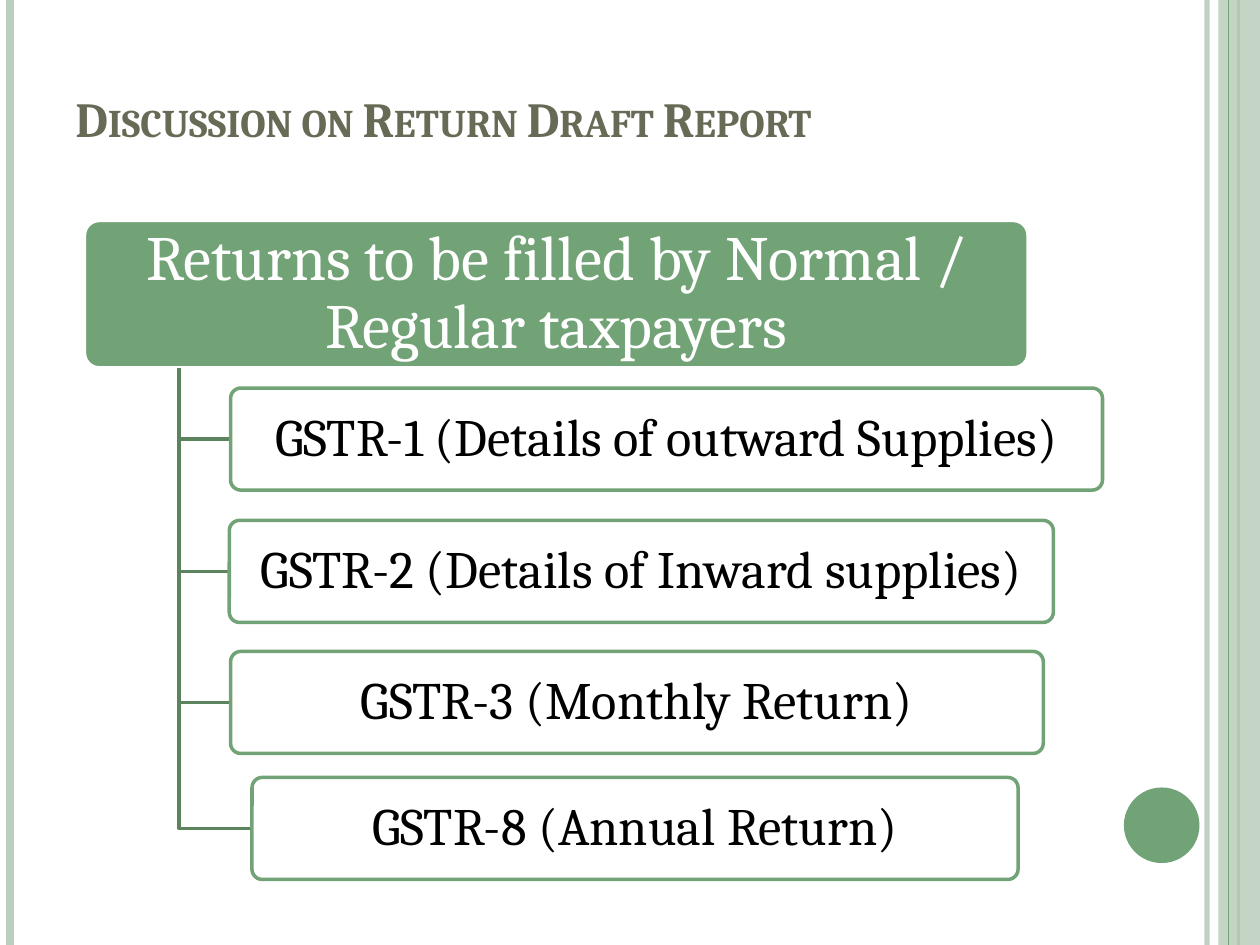
"""Build the slide on draft returns as a title and a hanging list of boxes."""
from dataclasses import dataclass

from lxml.etree import SubElement
from pptx import Presentation
from pptx.dml.color import RGBColor
from pptx.enum.shapes import MSO_CONNECTOR, MSO_SHAPE
from pptx.enum.text import MSO_ANCHOR, PP_ALIGN
from pptx.oxml import parse_xml
from pptx.oxml.ns import nsdecls, qn
from pptx.util import Inches, Pt


@dataclass(frozen=True)
class Theme:
    font: str = "Cambria"
    green: str = "72A376"
    pale: str = "BCCEBD"
    dark: str = "5B835E"
    olive: str = "676A55"
    white: str = "FFFFFF"
    black: str = "000000"
    title: int = 28
    head: int = 36
    item: int = 30
    edge: float = 2


@dataclass
class Deck:
    theme: Theme
    slide: object

    def paint(self, fill, color, alpha=100):
        fill.solid()
        fill.fore_color.rgb = RGBColor.from_string(color)
        if alpha < 100:
            tint = fill._xPr.find(qn("a:solidFill"))[0]
            SubElement(tint, qn("a:alpha")).set("val", str(alpha * 1000))

    def stroke(self, line, color, width, alpha=100):
        self.paint(line.fill, color, alpha)
        line.width = Pt(width)

    def rule(self, x, color, width, alpha=100):
        line = self.slide.shapes.add_connector(
            MSO_CONNECTOR.STRAIGHT, Inches(x), 0, Inches(x), Inches(7.5))
        self.stroke(line.line, color, width, alpha)
        SubElement(line._element.spPr, qn("a:effectLst"))

    def shape(self, kind, area, color, alpha=100, edge=None):
        form = self.slide.shapes.add_shape(kind, *map(Inches, area))
        form.shadow.inherit = False
        self.paint(form.fill, color, alpha)
        if edge:
            self.stroke(form.line, edge, self.theme.edge)
        else:
            form.line.fill.background()
        return form

    def label(self, frame, text, size, color):
        frame.word_wrap = True
        frame.text = text
        run = frame.paragraphs[0].runs[0]
        run.font.name = self.theme.font
        run.font.size = Pt(size)
        run.font.color.rgb = RGBColor.from_string(color)
        return run

    def title(self, text, area):
        frame = self.slide.shapes.add_textbox(*map(Inches, area)).text_frame
        run = self.label(frame, text, self.theme.title, self.theme.olive)
        frame.vertical_anchor = MSO_ANCHOR.BOTTOM
        run.font.bold = True
        props = run._r.get_or_add_rPr()
        props.set("cap", "small")
        props.find(qn("a:solidFill")).addnext(parse_xml(
            f'<a:effectLst {nsdecls("a")}><a:outerShdw blurRad="50800" '
            'dist="38100" dir="2700000"><a:srgbClr val="000000">'
            '<a:alpha val="40000"/></a:srgbClr></a:outerShdw></a:effectLst>'))

    def box(self, text, area, size, color, fill, edge, alpha=100, pad=0.06):
        form = self.shape(MSO_SHAPE.ROUNDED_RECTANGLE, area, fill, alpha, edge)
        form.adjustments[0] = 0.1
        frame = form.text_frame
        self.label(frame, text, size, color)
        frame.vertical_anchor = MSO_ANCHOR.MIDDLE
        frame.margin_left = frame.margin_right = Inches(pad)
        frame.margin_top = frame.margin_bottom = Inches(pad - 0.02)
        frame.paragraphs[0].alignment = PP_ALIGN.CENTER
        frame.paragraphs[0].line_spacing = 0.9

    def elbow(self, x, top, right, low):
        trace = self.slide.shapes.build_freeform(Inches(x), Inches(top))
        trace.add_line_segments(
            [(Inches(x), Inches(low)), (Inches(right), Inches(low))], close=False)
        form = trace.convert_to_shape()
        form.shadow.inherit = False
        form.fill.background()
        self.stroke(form.line, self.theme.dark, self.theme.edge)


def main():
    look = Theme()
    show = Presentation()
    show.slide_width, show.slide_height = Inches(10), Inches(7.5)
    deck = Deck(look, show.slides.add_slide(show.slide_layouts[6]))

    deck.rule(9.58, look.pale, 3, 93)
    deck.rule(0.08, look.pale, 4.5)
    deck.rule(9.83, look.green, 1.5)
    deck.shape(MSO_SHAPE.RECTANGLE, (9.67, 0, 0.33, 7.5), look.pale, 87)
    deck.rule(9.75, look.green, 0.75)
    deck.shape(MSO_SHAPE.OVAL, (8.92, 6.25, 0.6, 0.6), look.green)

    deck.title("Discussion on Return Draft Report", (0.5, 0.5, 8.17, 0.72))
    deck.box("Returns to be filled by Normal / Regular taxpayers",
             (0.67, 1.75, 7.49, 1.17), look.head, look.white,
             look.green, look.white, pad=0.07)

    high = 0.81
    items = [
        ("GSTR-1 (Details of outward Supplies)", 1.83, 3.08, 6.92),
        ("GSTR-2 (Details of Inward supplies)", 1.82, 4.13, 6.54),
        ("GSTR-3 (Monthly Return)", 1.83, 5.17, 6.45),
        ("GSTR-8 (Annual Return)", 2, 6.17, 6.08),
    ]
    for text, left, top, wide in items:
        deck.elbow(1.42, 2.92, left, top + high / 2)
        deck.box(text, (left, top, wide, high), look.item, look.black,
                 look.white, look.green, 90)

    show.save("out.pptx")


if __name__ == "__main__":
    main()
